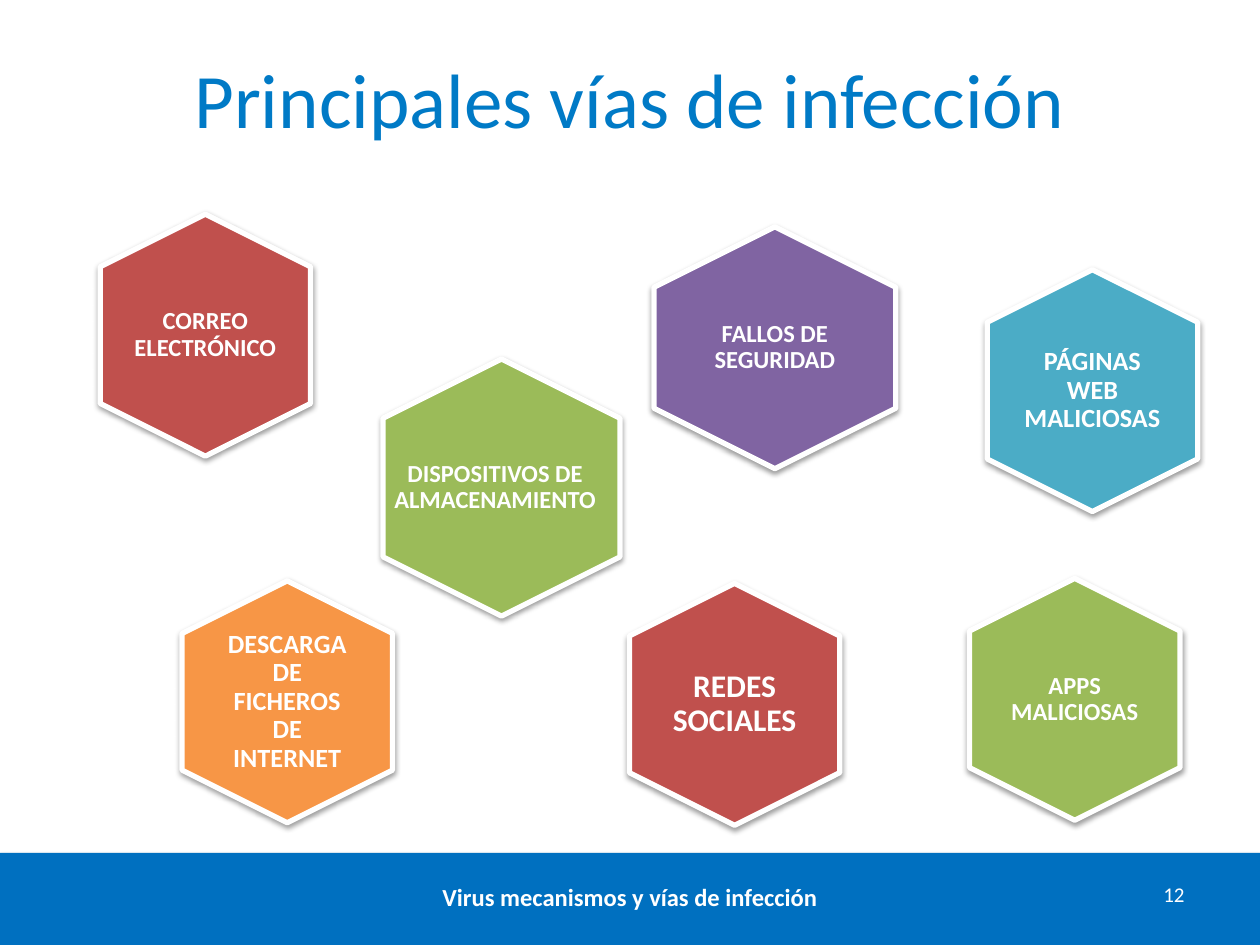
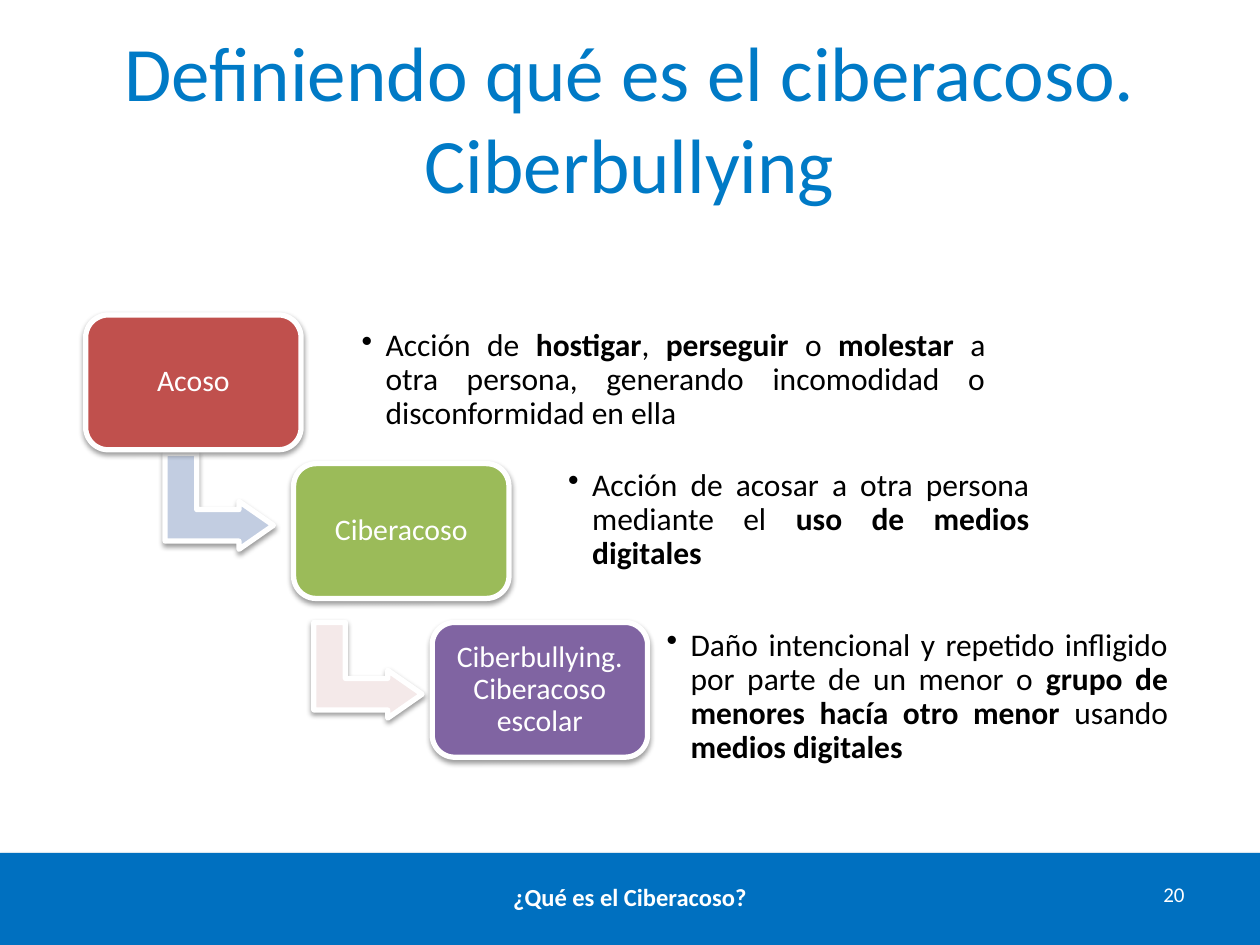
"""Build two slides on infection routes and cyberbullying."""
import lxml.etree
import pptx
import pptx.dml.color
import pptx.enum.shapes
import pptx.enum.text
import pptx.oxml.ns
import pptx.util

KIND = pptx.enum.shapes.MSO_SHAPE
ALIGN = pptx.enum.text.PP_ALIGN
ANCHOR = pptx.enum.text.MSO_ANCHOR
COLS, ROWS = 100, 75
WHITE, BLACK, BLUE, BAND = "FFFFFF", "000000", "007AC6", "0070C0"
RED, GREEN, PURPLE = "C0504D", "9BBB59", "8064A2"
TEAL, ORANGE, PALE, PINK = "4BACC6", "F79646", "C2CDE1", "F4E9E9"


def tint(code):
    return pptx.dml.color.RGBColor.from_string(code)


def node(parent, tag, **attrs):
    return lxml.etree.SubElement(parent, pptx.oxml.ns.qn(tag), **attrs)


class Deck:
    def __init__(self):
        self.show = pptx.Presentation()
        self.show.slide_width = pptx.util.Inches(10)
        self.show.slide_height = pptx.util.Inches(7.5)
        self.face = "Calibri"
        self.slide = None

    def box(self, left, top, wide, high):
        col = self.show.slide_width / COLS
        row = self.show.slide_height / ROWS
        return [round(n) for n in (left * col, top * row, wide * col, high * row)]

    def words(self, frame, text, size, color, bold=False, align=ALIGN.CENTER,
              inset=None, space=None, bullet=False):
        frame.word_wrap = True
        frame.auto_size = pptx.enum.text.MSO_AUTO_SIZE.NONE
        if inset is not None:
            gap = pptx.util.Inches(inset)
            frame.margin_left = frame.margin_right = gap
            frame.margin_top = frame.margin_bottom = gap
        para = frame.paragraphs[0]
        if bullet:
            props = para._p.get_or_add_pPr()
            hang = pptx.util.Inches(0.19)
            props.set("marL", str(hang))
            props.set("indent", str(-hang))
            node(props, "a:buChar", char="•")
        para.alignment = align
        para.line_spacing = space
        font = para.font
        font.name, font.size, font.bold = self.face, pptx.util.Pt(size), bold
        font.color.rgb = tint(color)
        for turn, part in enumerate(text.split("*")):
            if part:
                run = para.add_run()
                run.text = part
                if turn % 2:
                    run.font.bold = True

    def label(self, place, text, size, color, anchor=ANCHOR.TOP, **style):
        frame = self.slide.shapes.add_textbox(*self.box(*place)).text_frame
        frame.vertical_anchor = anchor
        self.words(frame, text, size, color, **style)

    def shape(self, kind, place, fill, edge=True, turn=0, dim=38, drop=1.6):
        item = self.slide.shapes.add_shape(kind, *self.box(*place))
        item.rotation = turn
        item.fill.solid()
        item.fill.fore_color.rgb = tint(fill)
        if edge:
            item.line.color.rgb = tint(WHITE)
            item.line.width = pptx.util.Pt(3)
        else:
            item.line.fill.background()
        item.shadow.inherit = False
        glow = item._element.spPr.find(pptx.oxml.ns.qn("a:effectLst"))
        cast = node(glow, "a:outerShdw", blurRad=str(pptx.util.Pt(3.1)),
                    dist=str(pptx.util.Pt(drop)), dir="5400000", rotWithShape="0")
        node(node(cast, "a:srgbClr", val=BLACK), "a:alpha", val=str(dim * 1000))
        return item

    def page(self, title, top, foot, num):
        self.slide = self.show.slides.add_slide(self.show.slide_layouts[5])
        self.shape(KIND.RECTANGLE, (0, 67.7, COLS, 7.3), BAND, False, dim=35, drop=1.8)
        head = self.slide.shapes.title
        head.left, head.top, head.width, head.height = self.box(5, top, 90, 12.5)
        head.text_frame.vertical_anchor = ANCHOR.MIDDLE
        self.words(head.text_frame, title, 44, BLUE)
        self.label((89.4, 69.5, 5.6, 4), num, 12, WHITE, align=ALIGN.RIGHT)
        self.label((15.4, 69.5, 69.2, 4), foot, 14, WHITE, bold=True)

    def hexa(self, text, fill, mid, row, room, size=14, tall=19.2, wide=16.7, slip=0):
        self.shape(KIND.HEXAGON, (mid - tall / 2, row - wide / 2, tall, wide), fill, turn=90)
        self.label((mid + slip - room / 2, row - 6.6, room, 13.2), text, size, WHITE,
                   ANCHOR.MIDDLE, bold=True, inset=0, space=0.9)

    def card(self, text, fill, left, top):
        item = self.shape(KIND.ROUNDED_RECTANGLE, (left, top, 17.1, 10.7), fill)
        item.text_frame.vertical_anchor = ANCHOR.MIDDLE
        self.words(item.text_frame, text, 17, WHITE, inset=0.07, space=0.9)

    def bend(self, fill, left, top):
        item = self.shape(KIND.BENT_UP_ARROW, (left, top, 7.6, 8.6), fill, turn=90)
        for spot, part in enumerate((0.33, 0.25, 0.36)):
            item.adjustments[spot] = part

    def note(self, text, *place):
        self.label(place, text, 18, BLACK, ANCHOR.MIDDLE, align=ALIGN.JUSTIFY,
                   inset=0.07, space=0.9, bullet=True)


def main():
    deck = Deck()
    deck.page("Principales vías de infección", 1.5,
              "Virus mecanismos y vías de infección", "12")
    deck.hexa("DISPOSITIVOS DE ALMACENAMIENTO", GREEN, 39.8, 38.7, 16.4,
              tall=20.4, wide=18.8, slip=-0.5)
    deck.hexa("CORREO ELECTRÓNICO", RED, 16.3, 26.6, 12.4)
    deck.hexa("FALLOS DE SEGURIDAD", PURPLE, 61.5, 27.6, 11.6, wide=19.2)
    deck.hexa("PÁGINAS WEB MALICIOSAS", TEAL, 86.7, 31, 11.5, 15)
    deck.hexa("REDES SOCIALES", RED, 58.3, 55.9, 11.5, 18)
    deck.hexa("DESCARGA DE FICHEROS DE INTERNET", ORANGE, 22.8, 55.7, 10.3, 15)
    deck.hexa("APPS MALICIOSAS", GREEN, 85.3, 55.5, 11.5)

    deck.page("Definiendo qué es el ciberacoso. Ciberbullying", 3,
              "¿Qué es el Ciberacoso?", "20")
    deck.bend(PALE, 13.6, 35.5)
    deck.bend(PINK, 25.4, 48.9)
    deck.card("Acoso", RED, 6.8, 25)
    deck.card("Ciberacoso", GREEN, 23.3, 36.8)
    deck.card("Ciberbullying. Ciberacoso escolar", PURPLE, 34.3, 49.4)
    deck.note("Acción de *hostigar*, *perseguir* o *molestar* a otra persona, "
              "generando incomodidad o disconformidad en ella", 28, 26.6, 50.9, 7.2)
    deck.note("Acción de acosar a otra persona mediante el *uso de medios digitales*",
              44.4, 37.7, 38, 7.2)
    deck.note("Daño intencional y repetido infligido por parte de un menor o "
              "*grupo de menores hacía otro menor* usando *medios digitales*",
              52.2, 49.5, 41.2, 11.7)
    deck.show.save("out.pptx")


if __name__ == "__main__":
    main()
